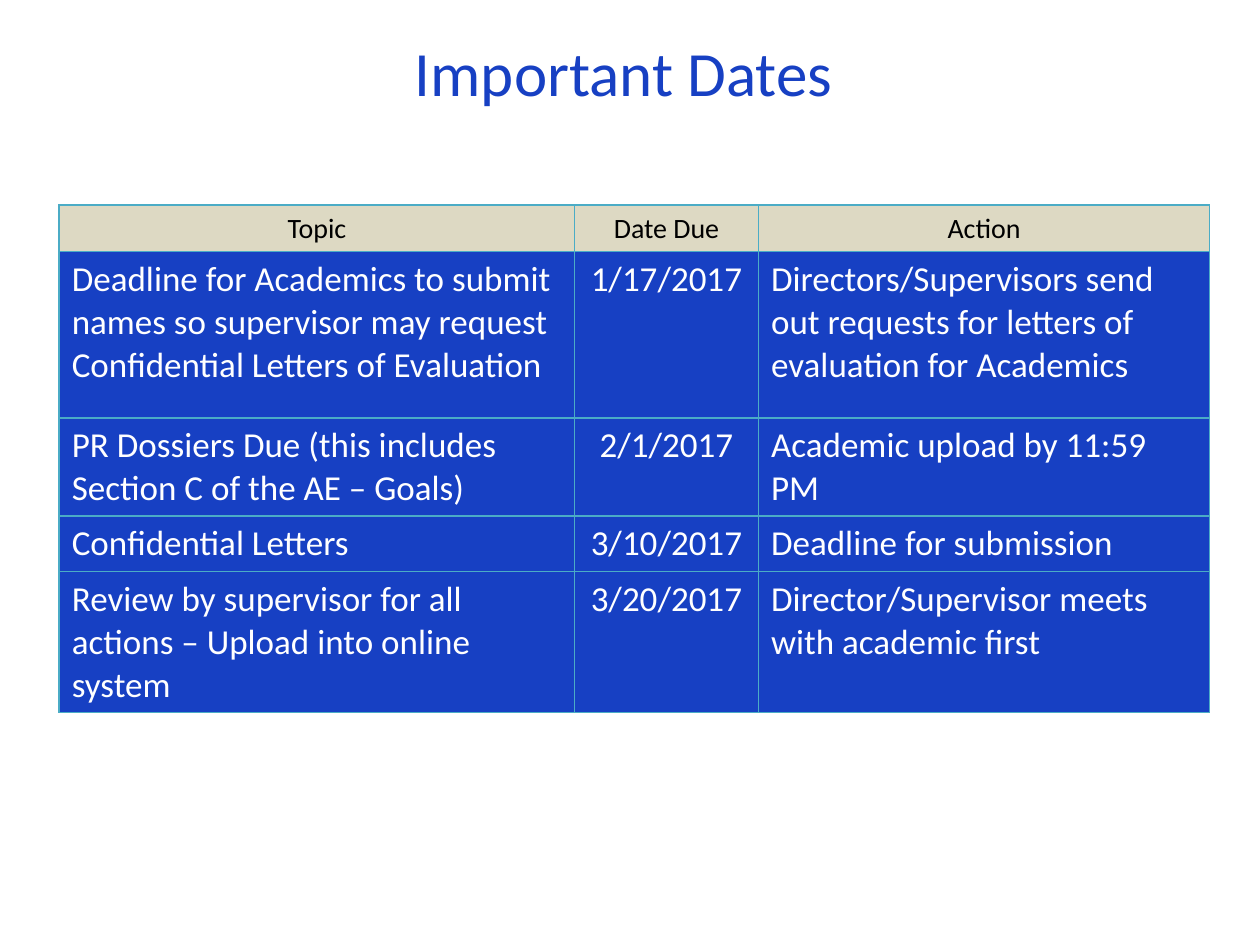
from dataclasses import dataclass

from lxml.etree import SubElement
from pptx import Presentation
from pptx.dml.color import RGBColor
from pptx.enum.text import MSO_ANCHOR, PP_ALIGN
from pptx.oxml.ns import qn
from pptx.util import Inches, Pt


@dataclass(frozen=True)
class Theme:
    font: str = "Calibri"
    blue: str = "1740C3"
    sand: str = "DDD9C3"
    border: str = "4BACC6"
    dark: str = "000000"
    light: str = "FFFFFF"
    title_size: int = 36
    header_size: int = 16
    body_size: int = 20
    border_width: int = 1


THEME = Theme()
SLIDE_WIDTH, SLIDE_HEIGHT = Inches(10), Inches(7.5)
COLUMN_WIDTHS = (4.09, 1.46, 3.58)
ROW_HEIGHTS = (0.37, 1.32, 0.78, 0.44, 1.12)
COLUMN_ALIGNMENTS = (PP_ALIGN.LEFT, PP_ALIGN.CENTER, PP_ALIGN.LEFT)
DATES = (
    ("Topic", "Date Due", "Action"),
    (
        "Deadline for Academics to submit names so supervisor may request "
        "Confidential Letters of Evaluation",
        "1/17/2017",
        "Directors/Supervisors send out requests for letters of evaluation for Academics",
    ),
    (
        "PR Dossiers Due (this includes Section C of the AE – Goals)",
        "2/1/2017",
        "Academic upload by 11:59 PM",
    ),
    ("Confidential Letters", "3/10/2017", "Deadline for submission"),
    (
        "Review by supervisor for all actions – Upload into online system",
        "3/20/2017",
        "Director/Supervisor meets with academic first",
    ),
)


def write_text(frame, text, size, color, alignment):
    para = frame.paragraphs[0]
    para.alignment = alignment
    span = para.add_run()
    span.text = text
    span.font.name = THEME.font
    span.font.size = Pt(size)
    span.font.color.rgb = RGBColor.from_string(color)


def add_title(page, text):
    box = page.shapes.add_textbox(
        int(SLIDE_WIDTH * 0.07), int(SLIDE_HEIGHT * 0.04),
        int(SLIDE_WIDTH * 0.85), int(SLIDE_HEIGHT * 0.07),
    )
    frame = box.text_frame
    frame.word_wrap = True
    frame.vertical_anchor = MSO_ANCHOR.MIDDLE
    write_text(frame, text, THEME.title_size, THEME.blue, PP_ALIGN.CENTER)


def draw_borders(cell):
    properties = cell._tc.get_or_add_tcPr()
    for side in ("lnL", "lnR", "lnT", "lnB"):
        line = SubElement(properties, qn(f"a:{side}"), w=str(Pt(THEME.border_width)))
        fill = SubElement(line, qn("a:solidFill"))
        SubElement(fill, qn("a:srgbClr"), val=THEME.border)


def fill_cell(cell, text, is_header, alignment):
    draw_borders(cell)
    cell.fill.solid()
    cell.fill.fore_color.rgb = RGBColor.from_string(THEME.sand if is_header else THEME.blue)
    write_text(
        cell.text_frame,
        text,
        THEME.header_size if is_header else THEME.body_size,
        THEME.dark if is_header else THEME.light,
        PP_ALIGN.CENTER if is_header else alignment,
    )


def add_dates_table(page):
    table = page.shapes.add_table(
        len(ROW_HEIGHTS), len(COLUMN_WIDTHS),
        int(SLIDE_WIDTH * 0.047), int(SLIDE_HEIGHT * 0.217),
        Inches(sum(COLUMN_WIDTHS)), Inches(sum(ROW_HEIGHTS)),
    ).table
    for column, width in zip(table.columns, COLUMN_WIDTHS):
        column.width = Inches(width)
    for index, (row, height, texts) in enumerate(zip(table.rows, ROW_HEIGHTS, DATES)):
        row.height = Inches(height)
        for cell, text, alignment in zip(row.cells, texts, COLUMN_ALIGNMENTS):
            fill_cell(cell, text, index == 0, alignment)


def main():
    deck = Presentation()
    deck.slide_width, deck.slide_height = SLIDE_WIDTH, SLIDE_HEIGHT
    page = deck.slides.add_slide(deck.slide_layouts[6])
    add_title(page, "Important Dates")
    add_dates_table(page)
    deck.save("out.pptx")


if __name__ == "__main__":
    main()
